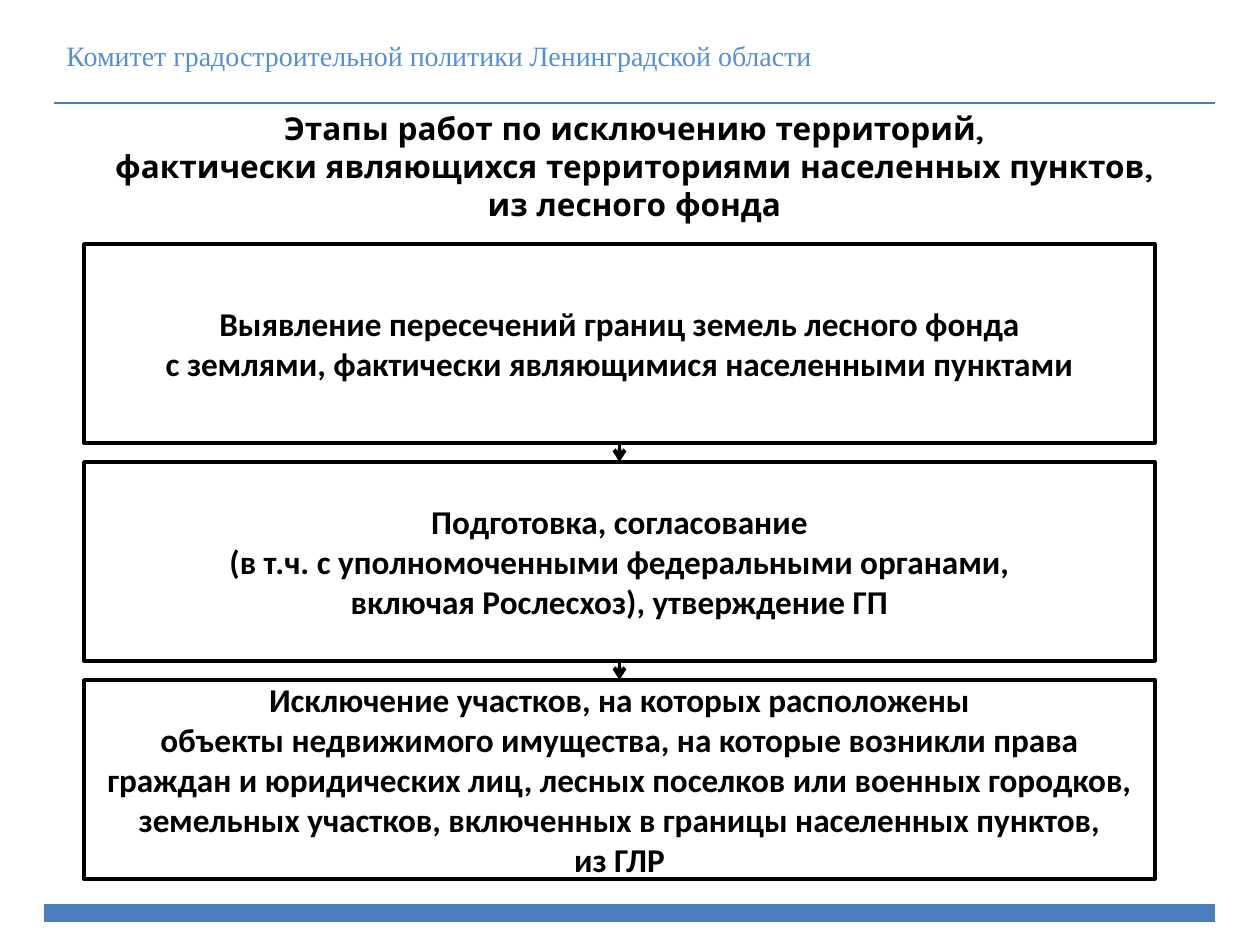
"""Build the slide on the stages of excluding territories from the forest fund."""
from lxml import etree
from pptx import Presentation
from pptx import util as u
from pptx.dml.color import RGBColor
from pptx.enum import shapes, text
from pptx.oxml.ns import qn

SCALE = 914400 / 126
BLACK, WHITE, BLUE, PALE_BLUE = "000000", "FFFFFF", "4B7EBC", "558ED5"

HEADER = ["Комитет градостроительной политики Ленинградской области"]
TITLE = [
    "Этапы работ по исключению территорий,",
    "фактически являющихся территориями населенных пунктов,",
    "из лесного фонда",
]
STAGES = [
    [
        "Выявление пересечений границ земель лесного фонда",
        "с землями, фактически являющимися населенными пунктами",
    ],
    [
        "Подготовка, согласование",
        "(в т.ч. с уполномоченными федеральными органами,",
        "включая Рослесхоз), утверждение ГП",
    ],
    [
        "Исключение участков, на которых расположены",
        "объекты недвижимого имущества, на которые возникли права "
        "граждан и юридических лиц, лесных поселков или военных городков, "
        "земельных участков, включенных в границы населенных пунктов,",
        "из ГЛР",
    ],
]
RULES = [(54, 103, 1215, 1), (44, 913, 1215, 10)]
STAGE_LEFT, STAGE_TOP, STAGE_WIDTH, STAGE_HEIGHT, STAGE_PITCH = 84, 244, 1071, 199, 218


def px(*values):
    return [u.Emu(round(value * SCALE)) for value in values]


def color(value):
    return RGBColor.from_string(value)


def write(box, lines, font, size, ink, bold=True, align=text.PP_ALIGN.CENTER):
    frame = box.text_frame
    frame.word_wrap = True
    for index, line in enumerate(lines):
        para = frame.add_paragraph() if index else frame.paragraphs[0]
        para.alignment = align
        span = para.add_run()
        span.text = line
        span.font.name = font
        span.font.size = u.Pt(size)
        span.font.bold = bold
        span.font.color.rgb = color(ink)


def add_line(page, start, end, ink, width):
    line = page.shapes.add_connector(shapes.MSO_CONNECTOR.STRAIGHT, *px(*start, *end))
    line.line.color.rgb = color(ink)
    line.line.width = u.Pt(width)
    etree.SubElement(line._element.spPr, qn("a:effectLst"))
    return line


def add_stage(page, index, lines):
    top = STAGE_TOP + index * STAGE_PITCH
    box = page.shapes.add_shape(
        shapes.MSO_SHAPE.RECTANGLE, *px(STAGE_LEFT, top, STAGE_WIDTH, STAGE_HEIGHT)
    )
    box.shadow.inherit = False
    box.fill.solid()
    box.fill.fore_color.rgb = color(WHITE)
    box.line.color.rgb = color(BLACK)
    box.line.width = u.Pt(2)
    box.text_frame.vertical_anchor = text.MSO_ANCHOR.MIDDLE
    write(box, lines, "Calibri", 19, BLACK)
    return box


def add_arrow(page, upper, lower):
    arrow = add_line(page, (0, 0), (0, 0), BLACK, 2.25)
    arrow.begin_connect(upper, 2)
    arrow.end_connect(lower, 0)
    etree.SubElement(arrow.line._get_or_add_ln(), qn("a:tailEnd"), type="arrow")


def main():
    deck = Presentation()
    deck.slide_width, deck.slide_height = px(1260, 945)
    page = deck.slides.add_slide(deck.slide_layouts[6])

    header = page.shapes.add_textbox(*px(54, 32, 1161, 45))
    write(header, HEADER, "Times New Roman", 16, PALE_BLUE, False, text.PP_ALIGN.LEFT)
    for left, top, right, width in RULES:
        add_line(page, (left, top), (right, top), BLUE, width)
    title = page.shapes.add_textbox(*px(54, 103, 1161, 127))
    write(title, TITLE, "Quicksand", 18, BLACK)

    boxes = [add_stage(page, index, lines) for index, lines in enumerate(STAGES)]
    for upper, lower in zip(boxes, boxes[1:]):
        add_arrow(page, upper, lower)
    deck.save("out.pptx")


if __name__ == "__main__":
    main()
